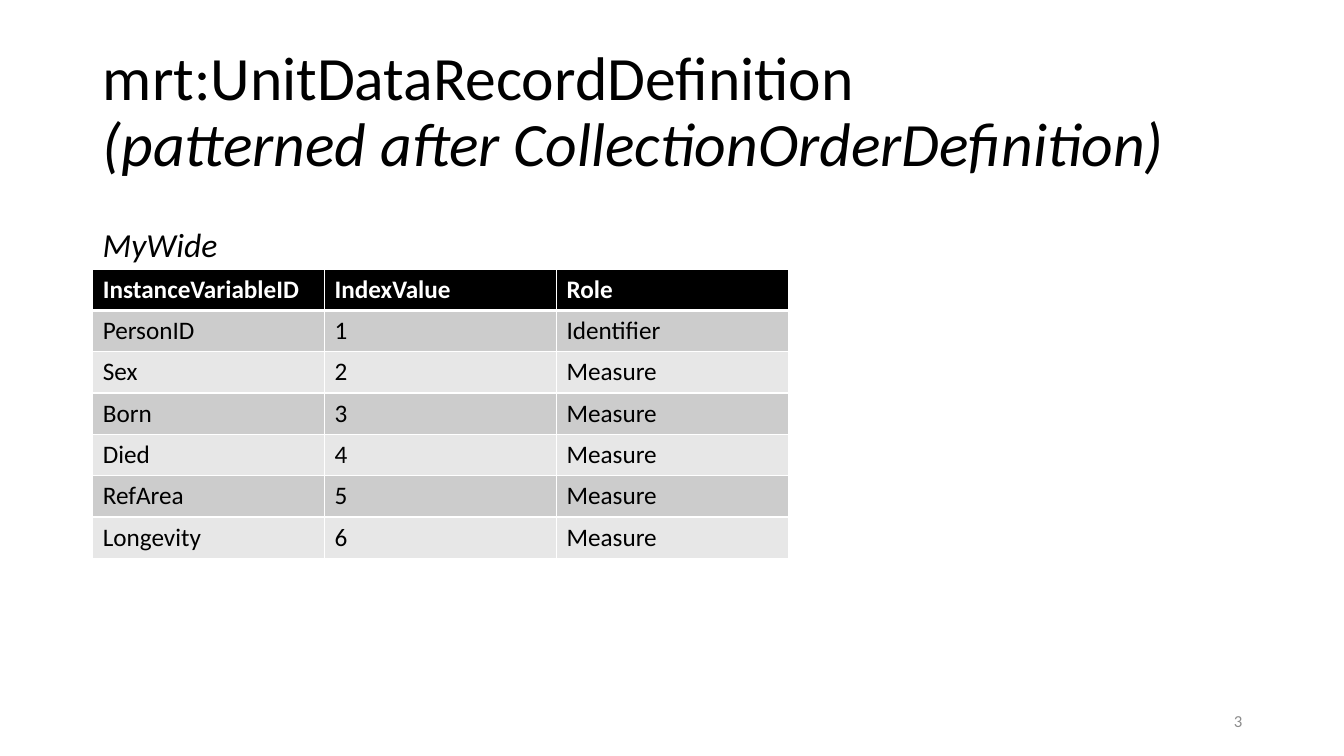
from lxml import etree
from pptx import Presentation
from pptx.dml.color import RGBColor
from pptx.enum.text import MSO_ANCHOR, MSO_AUTO_SIZE, PP_ALIGN
from pptx.oxml.ns import qn
from pptx.util import Inches, Pt

LEFT, RIGHT = PP_ALIGN.LEFT, PP_ALIGN.RIGHT
TOP, MIDDLE = MSO_ANCHOR.TOP, MSO_ANCHOR.MIDDLE
NO_AUTOFIT = MSO_AUTO_SIZE.NONE

FONT = "Calibri"
COLORS = {
    "text": "000000",
    "header": "000000",
    "header_text": "FFFFFF",
    "odd_row": "CCCCCC",
    "even_row": "E7E7E7",
    "border": "FFFFFF",
    "page_number": "8C8C8C",
}
MARGIN = 0.92
COLUMN_WIDTH, ROW_HEIGHT = 2.3, 0.41
RECORD_ROWS = [
    ("InstanceVariableID", "IndexValue", "Role"),
    ("PersonID", "1", "Identifier"),
    ("Sex", "2", "Measure"),
    ("Born", "3", "Measure"),
    ("Died", "4", "Measure"),
    ("RefArea", "5", "Measure"),
    ("Longevity", "6", "Measure"),
]


def write(paragraph, text, size=18, color="text", bold=False, italic=False, align=LEFT):
    """Append a formatted run to a paragraph."""
    paragraph.alignment = align
    run = paragraph.add_run()
    run.text = text
    run.font.name = FONT
    run.font.size = Pt(size)
    run.font.bold = bold
    run.font.italic = italic
    run.font.color.rgb = RGBColor.from_string(COLORS[color])


def add_title(slide, name, remark):
    """Fill the title placeholder with a name and an italic remark below it."""
    title = slide.shapes.title
    title.left, title.top = Inches(MARGIN), Inches(0.4)
    title.width, title.height = Inches(11.5), Inches(1.45)
    frame = title.text_frame
    frame.auto_size = NO_AUTOFIT
    frame.vertical_anchor = MIDDLE
    paragraph = frame.paragraphs[0]
    paragraph.line_spacing = 0.9
    write(paragraph, name, size=44)
    paragraph.add_line_break()
    write(paragraph, remark, size=44, italic=True)


def add_label(slide, text, left, top, width, height, anchor=TOP, wrap=True, **text_format):
    """Add a text box holding one line."""
    box = slide.shapes.add_textbox(Inches(left), Inches(top), Inches(width), Inches(height))
    box.text_frame.word_wrap = wrap
    box.text_frame.vertical_anchor = anchor
    write(box.text_frame.paragraphs[0], text, **text_format)


def set_borders(cell, **widths):
    """Draw the cell borders, with widths in points by side."""
    properties = cell._tc.get_or_add_tcPr()
    for side, width in widths.items():
        line = etree.SubElement(properties, qn(f"a:ln{side}"), w=str(Pt(width)))
        fill = etree.SubElement(line, qn("a:solidFill"))
        etree.SubElement(fill, qn("a:srgbClr"), val=COLORS["border"])


def add_record_table(slide, rows, left, top):
    """Add a table with a dark header and banded rows."""
    count, width = len(rows), len(rows[0])
    table = slide.shapes.add_table(
        count, width, Inches(left), Inches(top),
        Inches(width * COLUMN_WIDTH), Inches(count * ROW_HEIGHT),
    ).table
    for row_index, row in enumerate(rows):
        is_header = row_index == 0
        band = "header" if is_header else "odd_row" if row_index % 2 else "even_row"
        for column_index, value in enumerate(row):
            cell = table.cell(row_index, column_index)
            set_borders(cell, L=1, R=1, T=3 if row_index == 1 else 1, B=3 if is_header else 1)
            cell.fill.solid()
            cell.fill.fore_color.rgb = RGBColor.from_string(COLORS[band])
            write(cell.text_frame.paragraphs[0], value, bold=is_header,
                  color="header_text" if is_header else "text")


def main():
    """Build the slide and save it."""
    deck = Presentation()
    deck.slide_width, deck.slide_height = Inches(13.33), Inches(7.5)
    slide = deck.slides.add_slide(deck.slide_layouts.get_by_name("Title Only"))
    add_title(slide, "mrt:UnitDataRecordDefinition ", "(patterned after CollectionOrderDefinition)")
    add_record_table(slide, RECORD_ROWS, MARGIN, 2.67)
    add_label(slide, "MyWide", MARGIN, 2.17, 1.36, 0.5, wrap=False, size=24, italic=True)
    add_label(slide, "3", 9.42, 6.95, 3, 0.4, anchor=MIDDLE, size=12,
              color="page_number", align=RIGHT)
    deck.save("out.pptx")


if __name__ == "__main__":
    main()
